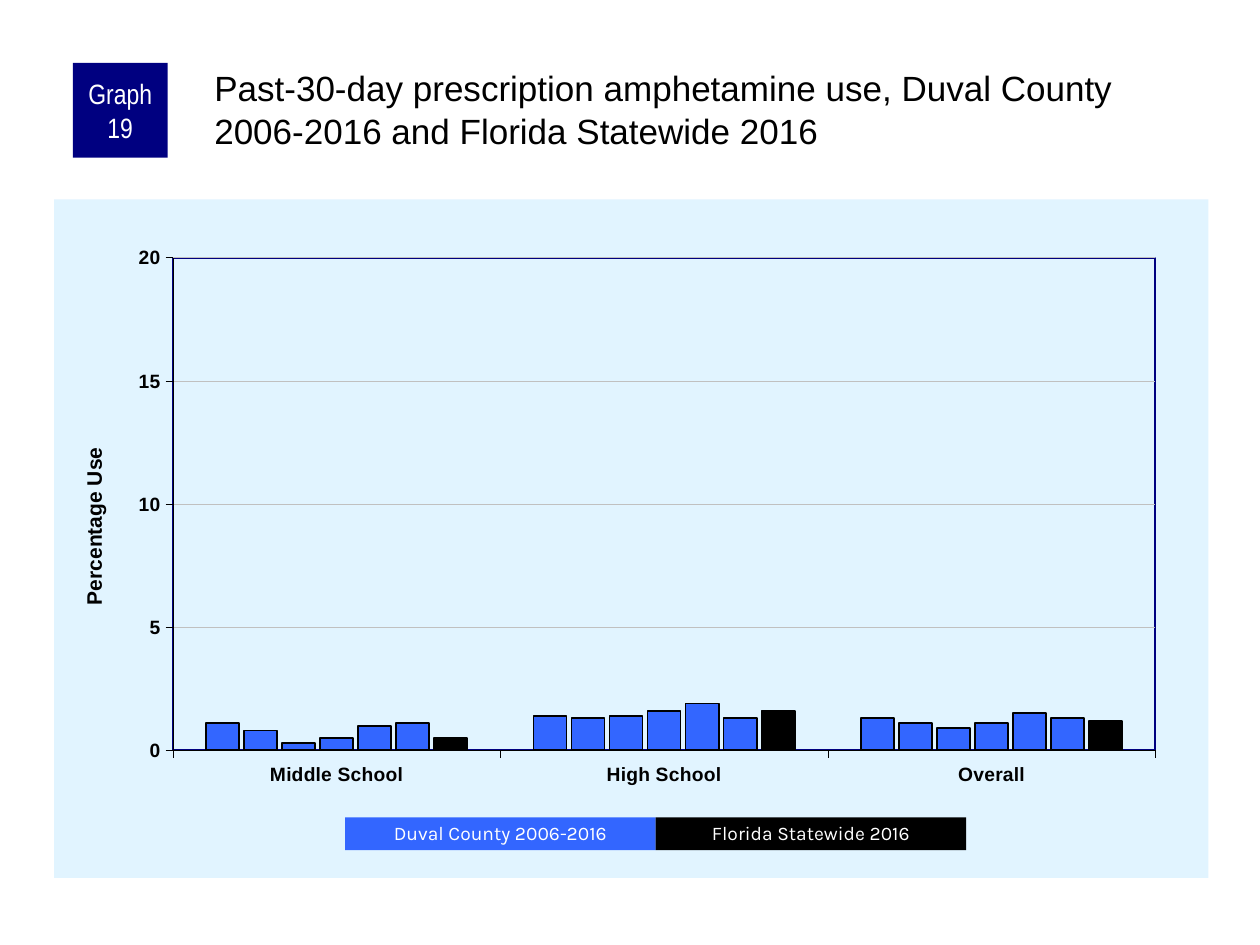
"""Build the slide on past-30-day prescription amphetamine use in Duval County."""
from lxml import etree
from pptx import Presentation
from pptx import util as u
from pptx.chart.data import CategoryChartData
from pptx.dml.color import RGBColor
from pptx.enum import chart as charts, shapes, text
from pptx.oxml import ns

TITLE = ("Past-30-day prescription amphetamine use, Duval County "
         "2006-2016 and Florida Statewide 2016")
BADGE = "Graph 19"
AXIS_TITLE = "Percentage Use"
GROUPS = ["Middle School", "High School", "Overall"]
DUVAL = [(1.1, 1.4, 1.3), (0.8, 1.3, 1.1), (0.3, 1.4, 0.9),
         (0.5, 1.6, 1.1), (1.0, 1.9, 1.5), (1.1, 1.3, 1.3)]
FLORIDA = (0.5, 1.6, 1.2)
LEGEND = [("Duval County 2006-2016", "duval"), ("Florida Statewide 2016", "florida")]
COLORS = {"duval": "3366FF", "florida": "000000", "panel": "E1F4FF", "badge": "000080",
          "ink": "000000", "grid": "C0C0C0", "white": "FFFFFF"}


def color(name):
    return RGBColor.from_string(COLORS[name])


def paint(fill, name):
    fill.solid()
    fill.fore_color.rgb = color(name)


def draw_line(line, name, width):
    paint(line.fill, name)
    line.width = u.Pt(width)


def style_font(font, face, size, name, bold=False):
    font.name, font.size, font.bold = face, u.Pt(size), bold
    font.color.rgb = color(name)


def write(para, words, face, size, name, bold=False):
    span = para.add_run()
    span.text = words
    style_font(span.font, face, size, name, bold)


def set_margins(frame, left, top, right, bottom):
    frame.margin_left, frame.margin_top = u.Cm(left), u.Cm(top)
    frame.margin_right, frame.margin_bottom = u.Cm(right), u.Cm(bottom)


def add_label(page, words, place, fill, face, size):
    box = page.shapes.add_shape(shapes.MSO_SHAPE.RECTANGLE, *map(u.Cm, place))
    box.shadow.inherit = False
    paint(box.fill, fill)
    box.line.fill.background()
    frame = box.text_frame
    frame.word_wrap = True
    frame.vertical_anchor = text.MSO_ANCHOR.MIDDLE
    set_margins(frame, 0.13, 0, 0.13, 0)
    para = frame.paragraphs[0]
    para.alignment = text.PP_ALIGN.CENTER
    write(para, words, face, size, "white")
    return para


def set_layout(parent, index, settings):
    for old in parent.findall(ns.qn("c:layout")):
        parent.remove(old)
    layout = etree.Element(ns.qn("c:layout"))
    manual = etree.SubElement(layout, ns.qn("c:manualLayout"))
    for tag, value in settings.items():
        etree.SubElement(manual, ns.qn(f"c:{tag}")).set("val", str(value))
    parent.insert(index, layout)


def add_plot_border(area, name, width):
    border = etree.SubElement(area, ns.qn("c:spPr"))
    etree.SubElement(border, ns.qn("a:noFill"))
    line = etree.SubElement(border, ns.qn("a:ln"), w=str(u.Pt(width)))
    fill = etree.SubElement(line, ns.qn("a:solidFill"))
    etree.SubElement(fill, ns.qn("a:srgbClr"), val=COLORS[name])


def style_axes(chart):
    for axis in (chart.category_axis, chart.value_axis):
        axis.major_tick_mark = charts.XL_TICK_MARK.OUTSIDE
        axis.minor_tick_mark = charts.XL_TICK_MARK.NONE
        style_font(axis.tick_labels.font, "Arial", 11, "ink", True)
        draw_line(axis.format.line, "ink", 0.25)
    axis = chart.value_axis
    axis.minimum_scale, axis.maximum_scale, axis.major_unit = 0, 20, 5
    axis.has_major_gridlines = True
    draw_line(axis.major_gridlines.format.line, "grid", 0.25)
    axis.tick_labels.number_format = "0"
    axis.tick_labels.number_format_is_linked = False
    write(axis.axis_title.text_frame.paragraphs[0], AXIS_TITLE, "Arial", 12, "ink", True)
    set_layout(axis.axis_title._element, 1,
               {"xMode": "edge", "yMode": "edge", "x": 0.02, "y": 0.36})


def add_usage_chart(page):
    data = CategoryChartData()
    data.categories = GROUPS
    for number, values in enumerate(DUVAL + [FLORIDA], 1):
        data.add_series(f"Series {number}", values)
    place = map(u.Cm, (1.09, 4.02, 23.27, 13.68))
    chart = page.shapes.add_chart(
        charts.XL_CHART_TYPE.COLUMN_CLUSTERED, *place, data).chart
    chart.has_legend = chart.has_title = False
    style_font(chart.font, "Arial", 8, "ink")
    plot = chart.plots[0]
    plot.gap_width, plot.overlap, plot.vary_by_categories = 200, -15, False
    for index, series in enumerate(plot.series):
        paint(series.format.fill, "duval" if index < len(DUVAL) else "florida")
        draw_line(series.format.line, "ink", 1)
    style_axes(chart)
    space = chart._chartSpace
    area = space.chart.plotArea
    set_layout(area, 0, {"layoutTarget": "inner", "xMode": "edge", "yMode": "edge",
                         "x": 0.103, "y": 0.086, "w": 0.851, "h": 0.726})
    add_plot_border(area, "badge", 1)
    panel = etree.Element(ns.qn("c:spPr"))
    fill = etree.SubElement(panel, ns.qn("a:solidFill"))
    etree.SubElement(fill, ns.qn("a:srgbClr"), val=COLORS["panel"])
    line = etree.SubElement(panel, ns.qn("a:ln"))
    etree.SubElement(line, ns.qn("a:noFill"))
    space.chart.addnext(panel)


def add_title(page):
    title = page.shapes.title
    title.left, title.top, title.width, title.height = map(u.Cm, (4.24, 1.27, 20.12, 2.11))
    frame = title.text_frame
    frame.word_wrap = True
    frame.auto_size = text.MSO_AUTO_SIZE.NONE
    frame.vertical_anchor = text.MSO_ANCHOR.TOP
    set_margins(frame, 0.08, 0.08, 0, 0)
    para = frame.paragraphs[0]
    para.alignment = text.PP_ALIGN.LEFT
    para.line_spacing, para.space_before = 1.0, u.Pt(0)
    write(para, TITLE, "Arial", 20, "ink")


def main():
    deck = Presentation()
    deck.slide_width, deck.slide_height = u.Cm(25.4), u.Cm(19.05)
    page = deck.slides.add_slide(deck.slide_layouts[5])
    add_title(page)
    add_usage_chart(page)
    add_label(page, BADGE, (1.47, 1.27, 1.91, 1.91), "badge", "Arial Narrow", 16)
    left, width = 6.96, 6.26
    for index, (words, fill) in enumerate(LEGEND):
        place = (left + index * width, 16.48, width, 0.66)
        add_label(page, words, place, fill, "Karla", 11).line_spacing = 0.9
    deck.save("out.pptx")


if __name__ == "__main__":
    main()
